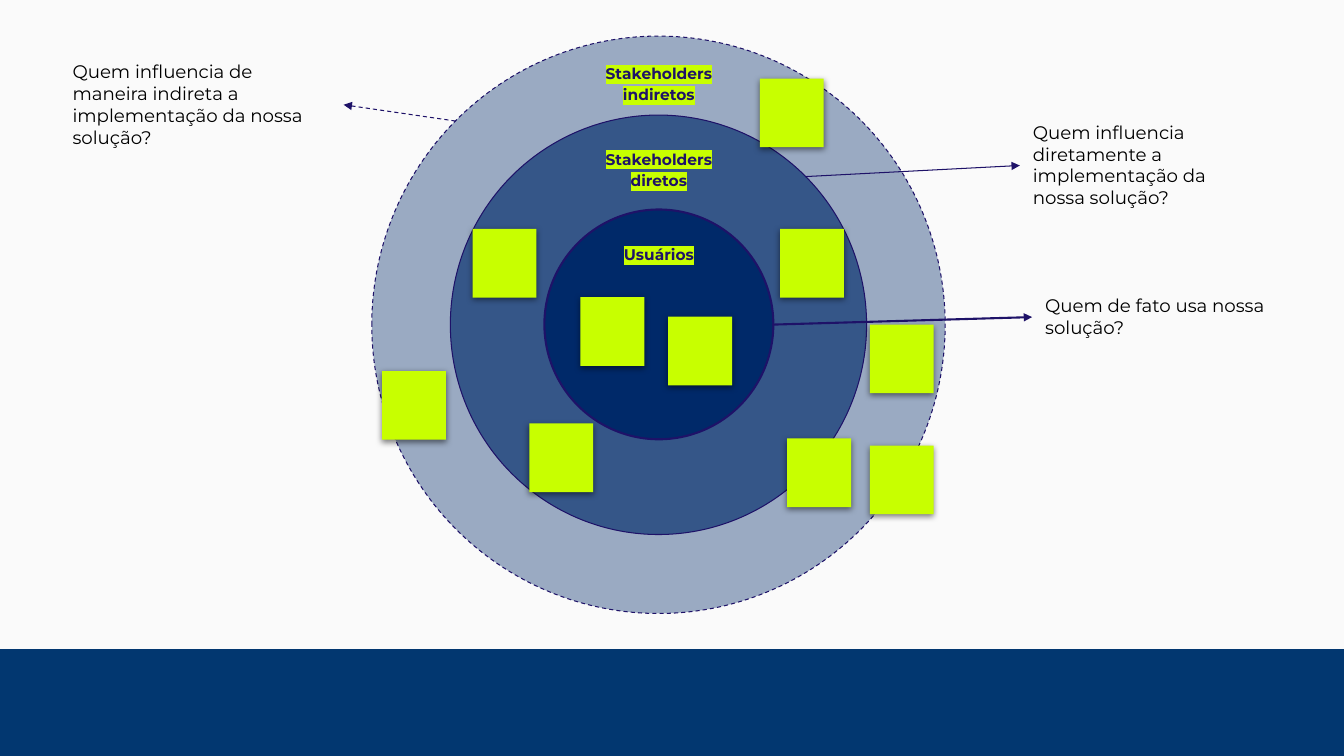
from lxml import etree
from pptx import Presentation
from pptx.dml.color import RGBColor
from pptx.enum.dml import MSO_LINE
from pptx.enum.shapes import MSO_CONNECTOR, MSO_SHAPE
from pptx.enum.text import MSO_AUTO_SIZE, PP_ALIGN
from pptx.oxml.ns import qn
from pptx.util import Cm, Pt

DASH = MSO_LINE.DASH
STRAIGHT = MSO_CONNECTOR.STRAIGHT
OVAL, RECT = MSO_SHAPE.OVAL, MSO_SHAPE.RECTANGLE
CENTER = PP_ALIGN.CENTER
FIT_SHAPE = MSO_AUTO_SIZE.SHAPE_TO_FIT_TEXT

PAPER = RGBColor(0xFA, 0xFA, 0xFA)
BAND = RGBColor(0x02, 0x37, 0x70)
NAVY = RGBColor(0x00, 0x29, 0x69)
INDIGO = RGBColor(0x1E, 0x12, 0x68)
LIME = RGBColor(0xC8, 0xFF, 0x00)
BLACK = RGBColor(0, 0, 0)
FONT = "Montserrat"

# All positions and lengths are in centimetres
SLIDE_W, SLIDE_H = 33.87, 19.05
BAND_TOP = 16.36
LABEL_H = 1.37
NOTE_W, NOTE_H = 1.61, 1.73
LEFT_SIDE, RIGHT_SIDE = 1, 3

# box, opacity %, line width pt, dash
RINGS = [
    ((9.37, 0.91, 14.45, 14.55), 38, 0.75, DASH),
    ((11.35, 2.9, 10.49, 10.57), 65, 0.75, None),
    ((13.72, 5.28, 5.77, 5.79), 100, 1.5, None),
]
# lines, left, top, width
LABELS = [
    (["Usuários"], 13.72, 5.99, 5.77),
    (["Stakeholders", "diretos"], 13.72, 3.58, 5.77),
    (["Stakeholders", "indiretos"], 13.11, 1.42, 6.99),
]
# text, box, arrow start, box side the arrow meets, line width pt, dash
QUESTIONS = [
    ("Quem de fato usa nossa solução?",
     (26.01, 7.09, 6.38, 1.8), (19.46, 8.18), LEFT_SIDE, 1.5, None),
    ("Quem influencia diretamente a implementação da nossa solução?",
     (25.7, 2.72, 6.38, 2.9), (20.29, 4.45), LEFT_SIDE, 0.75, None),
    ("Quem influencia de maneira indireta a implementação da nossa solução?",
     (1.5, 1.19, 7.16, 2.9), (11.48, 3.05), RIGHT_SIDE, 0.75, DASH),
]
NOTES = [
    (14.63, 7.49), (16.84, 7.98), (19.66, 5.77), (13.34, 10.67), (19.84, 11.05),
    (11.91, 5.77), (21.92, 11.23), (9.63, 9.35), (19.15, 1.98), (21.92, 8.18),
]


def add_xml(parent, tag, **attrs):
    return etree.SubElement(parent, qn(tag), attrs)


def add_filled(s, kind, box, color):
    sp = s.shapes.add_shape(kind, *map(Cm, box))
    sp.shadow.inherit = False
    sp.fill.solid()
    sp.fill.fore_color.rgb = color
    sp.line.fill.background()
    return sp


def style_line(line, width, dash):
    line.color.rgb = INDIGO
    line.width = Pt(width)
    if dash:
        line.dash_style = dash


def add_ring(s, box, opacity, width, dash):
    sp = add_filled(s, OVAL, box, NAVY)
    color = sp._element.spPr.find(qn("a:solidFill"))[0]
    if opacity < 100:
        add_xml(color, "a:alpha", val=str(opacity * 1000))
    style_line(sp.line, width, dash)


def add_text(s, lines, box, size, color, inset_x, inset_y):
    tb = s.shapes.add_textbox(*map(Cm, box))
    tf = tb.text_frame
    tf.word_wrap = True
    tf.margin_left = tf.margin_right = Cm(inset_x)
    tf.margin_top = tf.margin_bottom = Cm(inset_y)
    tf.text = "\n".join(lines)
    for p in tf.paragraphs:
        for r in p.runs:
            r.font.size = Pt(size)
            r.font.color.rgb = color
            r.font.name = FONT
    return tb


def add_label(s, lines, left, top, width):
    tb = add_text(s, lines, (left, top, width, LABEL_H), 11, INDIGO, 0.25, 0.13)
    for p in tb.text_frame.paragraphs:
        p.alignment = CENTER
        p.line_spacing = 1.15
        for r in p.runs:
            r.font.bold = True
            rPr = r._r.get_or_add_rPr()
            highlight = etree.Element(qn("a:highlight"))
            add_xml(highlight, "a:srgbClr", val=str(LIME))
            rPr.find(qn("a:latin")).addprevious(highlight)


def add_question(s, text, box, start, side, width, dash):
    """Add a question and the arrow that leads to it from its ring."""
    tb = add_text(s, [text], box, 13, BLACK, 0.33, 0.33)
    tb.text_frame.auto_size = FIT_SHAPE
    x, y = map(Cm, start)
    arrow = s.shapes.add_connector(STRAIGHT, x, y, x, y)
    arrow.end_connect(tb, side)
    style_line(arrow.line, width, dash)
    spPr = arrow._element.spPr
    add_xml(spPr.find(qn("a:ln")), "a:tailEnd", type="triangle")
    add_xml(spPr, "a:effectLst")


def add_note(s, left, top):
    sp = add_filled(s, RECT, (left, top, NOTE_W, NOTE_H), LIME)
    effects = sp._element.spPr.find(qn("a:effectLst"))
    shadow = add_xml(effects, "a:outerShdw", blurRad=str(Pt(4.5)),
                     dist=str(Pt(1.5)), dir="5400000", algn="bl", rotWithShape="0")
    color = add_xml(shadow, "a:srgbClr", val=str(BLACK))
    add_xml(color, "a:alpha", val="50000")


def main():
    prs = Presentation()
    prs.slide_width, prs.slide_height = Cm(SLIDE_W), Cm(SLIDE_H)
    s = prs.slides.add_slide(prs.slide_layouts[6])
    s.background.fill.solid()
    s.background.fill.fore_color.rgb = PAPER

    add_filled(s, RECT, (0, BAND_TOP, SLIDE_W, SLIDE_H - BAND_TOP), BAND)
    for ring in RINGS:
        add_ring(s, *ring)
    for label in LABELS:
        add_label(s, *label)
    for question in QUESTIONS:
        add_question(s, *question)
    for note in NOTES:
        add_note(s, *note)
    prs.save("out.pptx")


if __name__ == "__main__":
    main()
